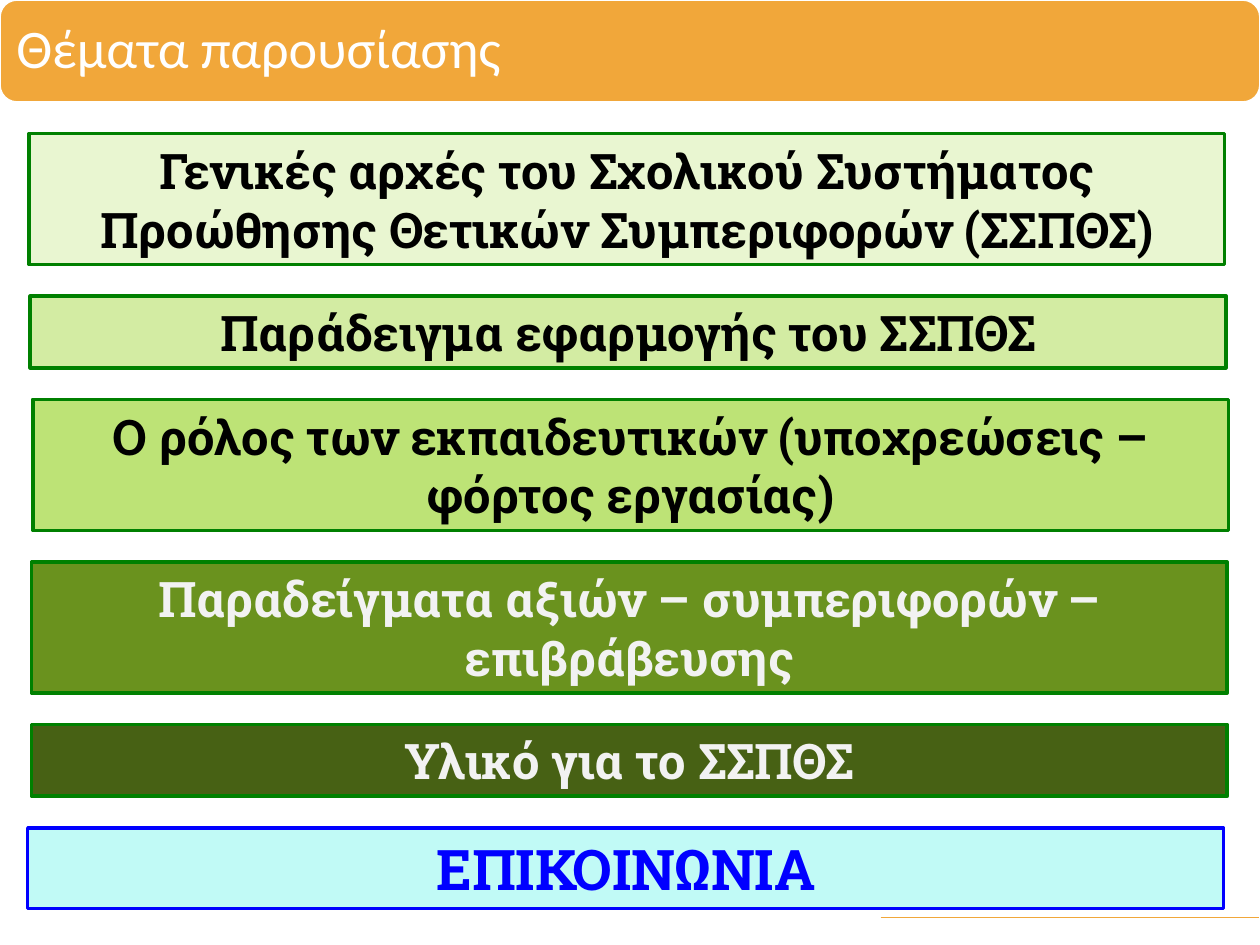
from lxml import etree
from pptx import Presentation
from pptx.dml.color import RGBColor
from pptx.enum.shapes import MSO_CONNECTOR, MSO_SHAPE
from pptx.enum.text import MSO_ANCHOR, MSO_AUTO_SIZE, PP_ALIGN
from pptx.oxml.ns import qn
from pptx.util import Pt

PX = 9144
ROUND = MSO_SHAPE.ROUNDED_RECTANGLE
RECT = MSO_SHAPE.RECTANGLE
LINE = MSO_CONNECTOR.STRAIGHT
MIDDLE = MSO_ANCHOR.MIDDLE
GROW = MSO_AUTO_SIZE.SHAPE_TO_FIT_TEXT
FIXED = MSO_AUTO_SIZE.NONE
LEFT = PP_ALIGN.LEFT
CENTER = PP_ALIGN.CENTER

WHITE = RGBColor(0xFF, 0xFF, 0xFF)
BLACK = RGBColor(0x00, 0x00, 0x00)
PALE = RGBColor(0xF2, 0xF2, 0xF2)
ORANGE = RGBColor(0xF1, 0xA7, 0x3A)
GREEN = RGBColor(0x00, 0x80, 0x00)
BLUE = RGBColor(0x00, 0x00, 0xFF)
MIST = RGBColor(0xE9, 0xF6, 0xD1)
LIME = RGBColor(0xD3, 0xEC, 0xA3)
LEAF = RGBColor(0xBD, 0xE3, 0x76)
OLIVE = RGBColor(0x6A, 0x92, 0x1E)
MOSS = RGBColor(0x47, 0x61, 0x14)
AQUA = RGBColor(0xC1, 0xFA, 0xF6)

TOP, WIDE, GAP = 106, 949, 25
TOPICS = [
    (23, 104, "Γενικές αρχές του Σχολικού Συστήματος Προώθησης Θετικών Συμπεριφορών (ΣΣΠΘΣ)",
     MIST, GREEN, BLACK, 28),
    (24, 57, "Παράδειγμα εφαρμογής του ΣΣΠΘΣ", LIME, GREEN, BLACK, 28),
    (26, 104, "Ο ρόλος των εκπαιδευτικών (υποχρεώσεις – φόρτος εργασίας)",
     LEAF, GREEN, BLACK, 28),
    (25, 104, "Παραδείγματα αξιών – συμπεριφορών – επιβράβευσης",
     OLIVE, GREEN, PALE, 28),
    (25, 57, "Υλικό για το ΣΣΠΘΣ", MOSS, GREEN, PALE, 28),
    (22, 64, "ΕΠΙΚΟΙΝΩΝΙΑ", AQUA, BLUE, BLUE, 32),
]


class Deck:
    head = "Calibri"
    body = "Roboto Slab"

    def __init__(self, wide, high):
        self.file = Presentation()
        self.file.slide_width = wide * PX
        self.file.slide_height = high * PX
        self.slide = self.file.slides.add_slide(self.file.slide_layouts[5])

    def add_text(self, para, text, font, size, color, bold=False):
        run = para.add_run()
        run.text = text
        run.font.name = font
        run.font.size = Pt(size)
        run.font.color.rgb = color
        run.font.bold = bold

    def box(self, kind, x, y, w, h, fill, edge, width):
        shape = self.slide.shapes.add_shape(kind, x * PX, y * PX, w * PX, h * PX)
        shape.shadow.inherit = False
        shape.fill.solid()
        shape.fill.fore_color.rgb = fill
        shape.line.color.rgb = edge
        shape.line.width = Pt(width)
        return shape

    def title(self, text, w, h, pad):
        banner = self.box(ROUND, 0, 0, w, h, ORANGE, WHITE, 1)
        title = self.slide.shapes.title
        banner._element.addnext(title._element)
        title.left, title.top, title.width, title.height = 0, 0, w * PX, h * PX
        frame = title.text_frame
        frame.word_wrap = True
        frame.auto_size = FIXED
        frame.vertical_anchor = MIDDLE
        frame.margin_left = frame.margin_right = pad * PX
        frame.margin_top = frame.margin_bottom = pad * PX
        para = frame.paragraphs[0]
        para.alignment = LEFT
        para.line_spacing = 0.9
        self.add_text(para, text, self.head, 31, WHITE)

    def topic(self, x, y, w, h, text, fill, edge, color, size):
        frame = self.box(RECT, x, y, w, h, fill, edge, 2).text_frame
        frame.word_wrap = True
        frame.auto_size = GROW
        frame.vertical_anchor = MIDDLE
        para = frame.paragraphs[0]
        para.alignment = CENTER
        self.add_text(para, text, self.body, size, color, True)

    def rule(self, x, y, end, color, width):
        line = self.slide.shapes.add_connector(LINE, x * PX, y * PX, end * PX, y * PX)
        line.line.color.rgb = color
        line.line.width = Pt(width)
        etree.SubElement(line._element.spPr, qn("a:effectLst"))


def main():
    deck = Deck(1000, 750)
    deck.title("Θέματα παρουσίασης", 1000, 81, 13)
    deck.rule(699, 728, 999, ORANGE, 0.5)
    y = TOP
    for x, high, text, fill, edge, color, size in TOPICS:
        deck.topic(x, y, WIDE, high, text, fill, edge, color, size)
        y += high + GAP
    deck.file.save("out.pptx")


if __name__ == "__main__":
    main()
